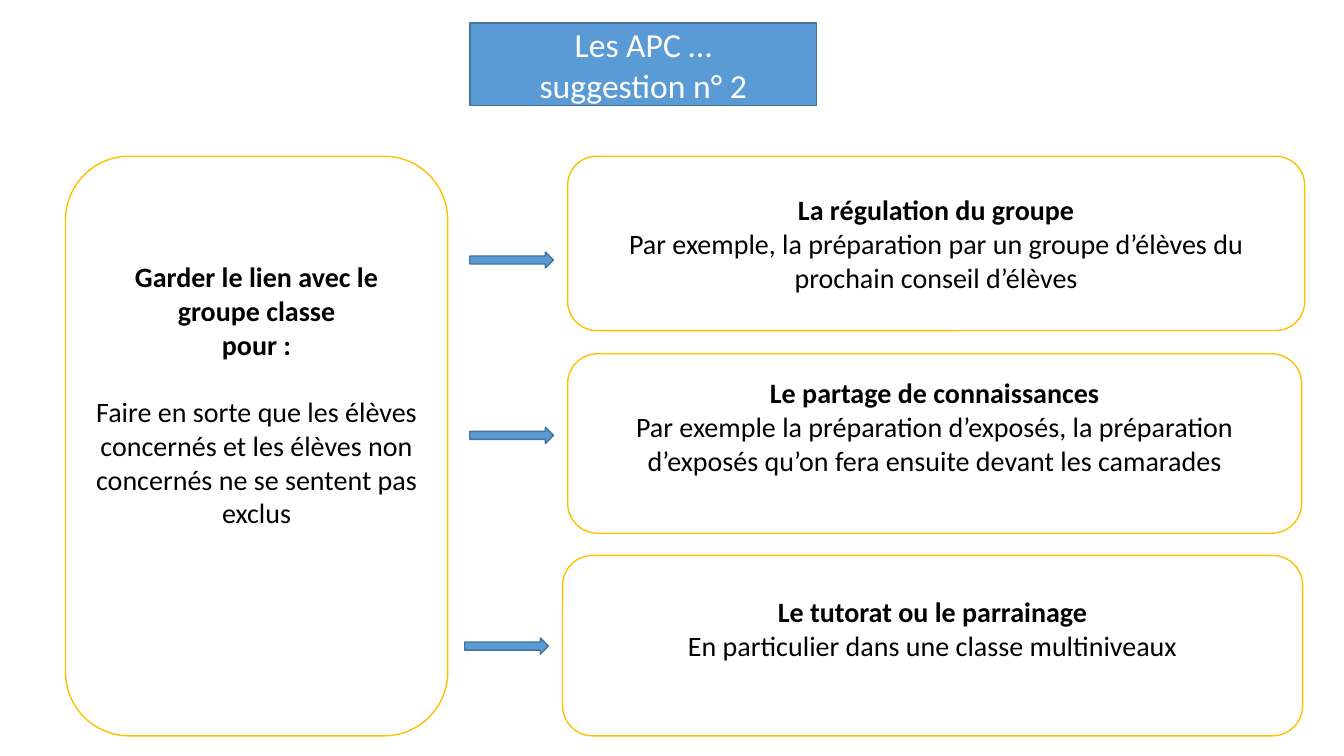
from lxml import etree
from pptx import Presentation
from pptx.dml.color import RGBColor
from pptx.enum.shapes import MSO_SHAPE
from pptx.enum.text import MSO_ANCHOR, MSO_AUTO_SIZE, PP_ALIGN
from pptx.oxml.ns import qn
from pptx.util import Inches, Pt

ROUNDED = MSO_SHAPE.ROUNDED_RECTANGLE
ARROW = MSO_SHAPE.RIGHT_ARROW
MIDDLE = MSO_ANCHOR.MIDDLE
CENTER = PP_ALIGN.CENTER
NO_AUTOFIT = MSO_AUTO_SIZE.NONE

BLUE = RGBColor(0x5B, 0x9B, 0xD5)
DARK_BLUE = RGBColor(0x43, 0x73, 0x9E)
GOLD = RGBColor(0xFF, 0xC0, 0x00)
WHITE = RGBColor(0xFF, 0xFF, 0xFF)
BLACK = RGBColor(0x00, 0x00, 0x00)

FONT = "Calibri"
TITLE_SIZE = 24
BODY_SIZE = 20
LINE = 0.34  # height of one body line, inches
INSET = 0.05
TITLE_ONLY = 5

# Boxes are left, top, width, height in inches
TITLE_BOX = (4.66, 0.23, 3.44, 0.82)
GOAL_BOX = (0.65, 1.55, 3.79, 5.75)
ARROW_SIZE = (0.83, 0.16)
ARROW_GAP = 0.97  # from the left of an arrow to its card

GOAL = [
    ("Garder le lien avec le groupe classe", True),
    ("pour :", True),
    ("Faire en sorte que les élèves concernés et les élèves non "
     "concernés ne se sentent pas exclus", False),
]

# Card box, arrow top, lines the text is raised by, heading, example
SUGGESTIONS = [
    ((5.63, 1.55, 7.31, 1.73), 2.5, 0, "La régulation du groupe",
     "Par exemple, la préparation par un groupe d’élèves du prochain "
     "conseil d’élèves"),
    ((5.63, 3.51, 7.28, 1.78), 4.24, 1, "Le partage de connaissances",
     "Par exemple la préparation d’exposés, la préparation d’exposés "
     "qu’on fera ensuite devant les camarades"),
    ((5.58, 5.51, 7.34, 1.79), 6.33, 1, "Le tutorat ou le parrainage",
     "En particulier dans une classe multiniveaux"),
]


def paint(shape, fill, line):
    shape.fill.solid()
    shape.fill.fore_color.rgb = fill
    shape.line.color.rgb = line
    shape.line.width = Pt(1)


def add_painted(slide, kind, box, fill, line):
    shape = slide.shapes.add_shape(kind, *map(Inches, box))
    shape.shadow.inherit = False
    paint(shape, fill, line)
    return shape


def write(shape, lines, size, color):
    """Fill a shape with centred paragraphs given as (text, bold)."""
    frame = shape.text_frame
    frame.word_wrap = True
    frame.auto_size = NO_AUTOFIT
    frame.vertical_anchor = MIDDLE
    frame.text = "\n".join(text for text, _ in lines)
    for paragraph, (_, bold) in zip(frame.paragraphs, lines):
        paragraph.alignment = CENTER
        font = paragraph.runs[0].font
        font.name, font.size, font.bold = FONT, Pt(size), bold
        font.color.rgb = color


def add_title(slide, box):
    title = slide.shapes.title
    title.left, title.top, title.width, title.height = map(Inches, box)
    # Rounded outline for the placeholder
    properties = title.element.spPr
    geometry = etree.SubElement(properties, qn("a:prstGeom"), prst="roundRect")
    etree.SubElement(geometry, qn("a:avLst"))
    paint(title, BLUE, DARK_BLUE)
    write(title, [("Les APC …", False), ("suggestion n° 2", False)],
          TITLE_SIZE, WHITE)


def add_card(slide, box, lines, raised_lines):
    card = add_painted(slide, ROUNDED, box, WHITE, GOLD)
    write(card, lines, BODY_SIZE, BLACK)
    card.text_frame.margin_bottom = Inches(INSET + raised_lines * LINE)
    return card


def add_goal(slide, box):
    card = add_card(slide, box, GOAL, 3)
    card.text_frame.paragraphs[-1].space_before = Inches(LINE)


def add_suggestion(slide, box, arrow_top, raised_lines, heading, example):
    add_card(slide, box, [(heading, True), (example, False)], raised_lines)
    arrow_box = (box[0] - ARROW_GAP, arrow_top, *ARROW_SIZE)
    add_painted(slide, ARROW, arrow_box, BLUE, DARK_BLUE)


def main():
    presentation = Presentation()
    presentation.slide_width = Inches(13.33)
    presentation.slide_height = Inches(7.5)
    slide = presentation.slides.add_slide(
        presentation.slide_layouts[TITLE_ONLY])
    add_title(slide, TITLE_BOX)
    add_goal(slide, GOAL_BOX)
    for suggestion in SUGGESTIONS:
        add_suggestion(slide, *suggestion)
    presentation.save("out.pptx")


if __name__ == "__main__":
    main()
